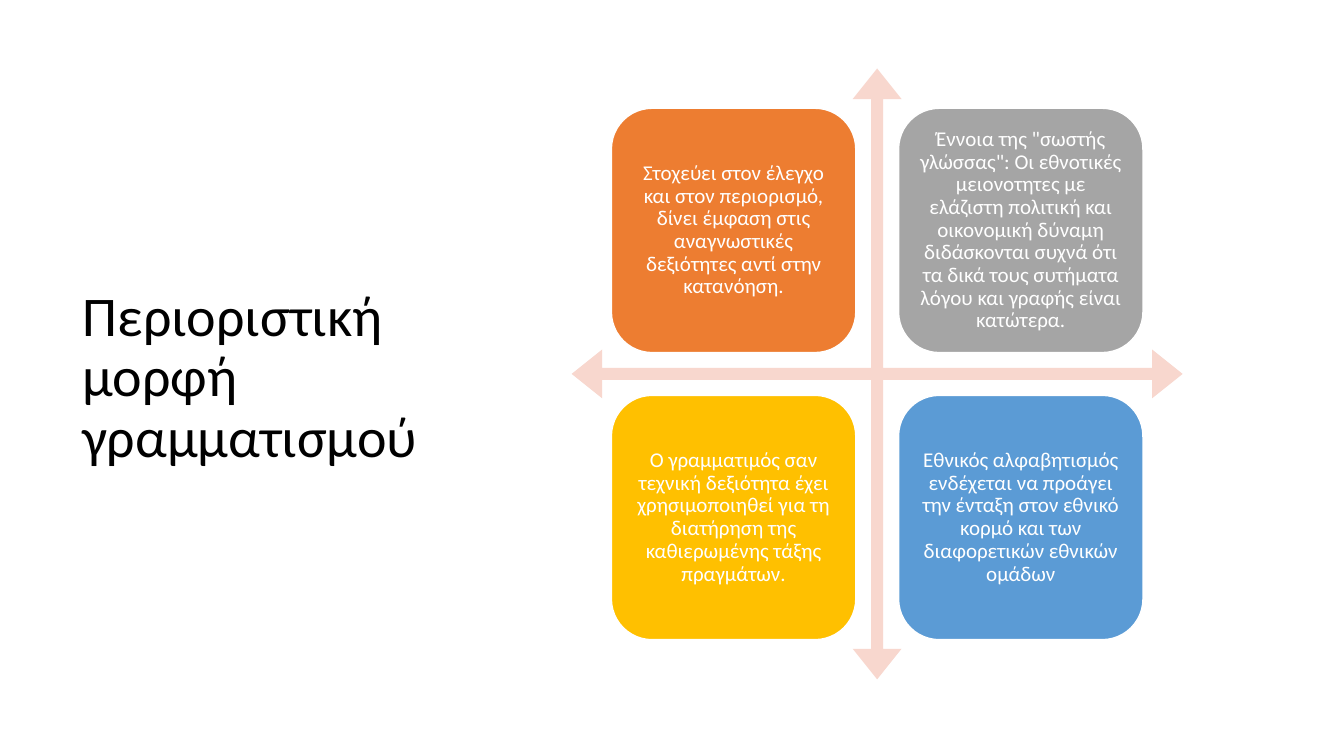
from dataclasses import dataclass
from typing import Any

import pptx
import pptx.dml.color
import pptx.enum.shapes
import pptx.enum.text
import pptx.util

Inches = pptx.util.Inches
Shapes = pptx.enum.shapes.MSO_SHAPE
Align = pptx.enum.text.PP_ALIGN


@dataclass(frozen=True)
class Theme:
    font: str = "Calibri"
    title_size: float = 40
    tile_size: float = 15
    line_spacing: float = 0.9
    title_color: str = "000000"
    tile_text: str = "FFFFFF"
    arrow: str = "F8D7CE"


@dataclass(frozen=True)
class Matrix:
    """Square area in inches; tile sizes and offsets are shares of its side."""
    left: float = 5.67
    top: float = 0.68
    side: float = 6.06
    tile: float = 0.4
    margin: float = 0.065

    def offset(self, index: int) -> float:
        share = self.margin if index == 0 else 1 - self.margin - self.tile
        return share * self.side


@dataclass(frozen=True)
class Tile:
    column: int
    row: int
    fill: str
    text: str


THEME = Theme()
MATRIX = Matrix()
TITLE = "Περιοριστική μορφή γραμματισμού"
TILES = (
    Tile(0, 0, "ED7D31", "Στοχεύει στον έλεγχο και στον περιορισμό, δίνει έμφαση "
         "στις αναγνωστικές δεξιότητες αντί στην κατανόηση."),
    Tile(1, 0, "A5A5A5", 'Έννοια της "σωστής γλώσσας": Οι εθνοτικές μειονοτητες με '
         "ελάζιστη πολιτική και οικονομική δύναμη διδάσκονται συχνά ότι τα δικά τους "
         "συτήματα λόγου και γραφής είναι κατώτερα."),
    Tile(0, 1, "FFC000", "Ο γραμματιμός σαν τεχνική δεξιότητα έχει χρησιμοποιηθεί "
         "για τη διατήρηση της καθιερωμένης τάξης πραγμάτων."),
    Tile(1, 1, "5B9BD5", "Εθνικός αλφαβητισμός ενδέχεται να προάγει την ένταξη στον "
         "εθνικό κορμό και των διαφορετικών εθνικών ομάδων"),
)


def rgb(color: str) -> pptx.dml.color.RGBColor:
    return pptx.dml.color.RGBColor.from_string(color)


def apply_format(target: Any, values: dict[str, Any]) -> None:
    for name, value in values.items():
        setattr(target, name, value)


def write_text(shape: Any, text: str, size: float, color: str, alignment: Any,
               inset: float) -> None:
    frame = shape.text_frame
    frame.text = text
    apply_format(frame, {
        "word_wrap": True,
        "auto_size": pptx.enum.text.MSO_AUTO_SIZE.NONE,
        "vertical_anchor": pptx.enum.text.MSO_ANCHOR.MIDDLE,
        **{f"margin_{edge}": Inches(inset) for edge in ("left", "top", "right", "bottom")},
    })
    paragraph = frame.paragraphs[0]
    apply_format(paragraph, {"alignment": alignment, "line_spacing": THEME.line_spacing})
    font = paragraph.runs[0].font
    apply_format(font, {"name": THEME.font, "size": pptx.util.Pt(size), "bold": False})
    font.color.rgb = rgb(color)


def add_block(shapes: Any, kind: Any, left: float, top: float, side: float, fill: str) -> Any:
    """Add a square shape with a solid fill and no shadow."""
    shape = shapes.add_shape(kind, Inches(left), Inches(top), Inches(side), Inches(side))
    shape.shadow.inherit = False
    shape.fill.solid()
    shape.fill.fore_color.rgb = rgb(fill)
    return shape


def add_title(slide: Any) -> None:
    title = slide.shapes.title
    apply_format(title, {"left": Inches(0.72), "top": Inches(1.05),
                         "width": Inches(3.7), "height": Inches(5.41)})
    write_text(title, TITLE, THEME.title_size, THEME.title_color, Align.LEFT, 0.1)


def add_cross_arrow(shapes: Any) -> None:
    arrow = add_block(shapes, Shapes.QUAD_ARROW, MATRIX.left, MATRIX.top,
                      MATRIX.side, THEME.arrow)
    arrow.line.fill.background()
    for index, share in enumerate((0.02, 0.04, 0.05)):
        arrow.adjustments[index] = share


def add_tile(shapes: Any, tile: Tile) -> None:
    shape = add_block(shapes, Shapes.ROUNDED_RECTANGLE,
                      MATRIX.left + MATRIX.offset(tile.column),
                      MATRIX.top + MATRIX.offset(tile.row),
                      MATRIX.tile * MATRIX.side, tile.fill)
    shape.line.color.rgb = rgb(THEME.tile_text)
    shape.line.width = pptx.util.Pt(1)
    write_text(shape, tile.text, THEME.tile_size, THEME.tile_text, Align.CENTER, 0.06)


def main() -> None:
    presentation = pptx.Presentation()
    apply_format(presentation, {"slide_width": Inches(13.33), "slide_height": Inches(7.5)})
    slide = presentation.slides.add_slide(presentation.slide_layouts.get_by_name("Title Only"))
    add_title(slide)
    group = slide.shapes.add_group_shape()
    add_cross_arrow(group.shapes)
    for tile in TILES:
        add_tile(group.shapes, tile)
    presentation.save("out.pptx")


if __name__ == "__main__":
    main()
